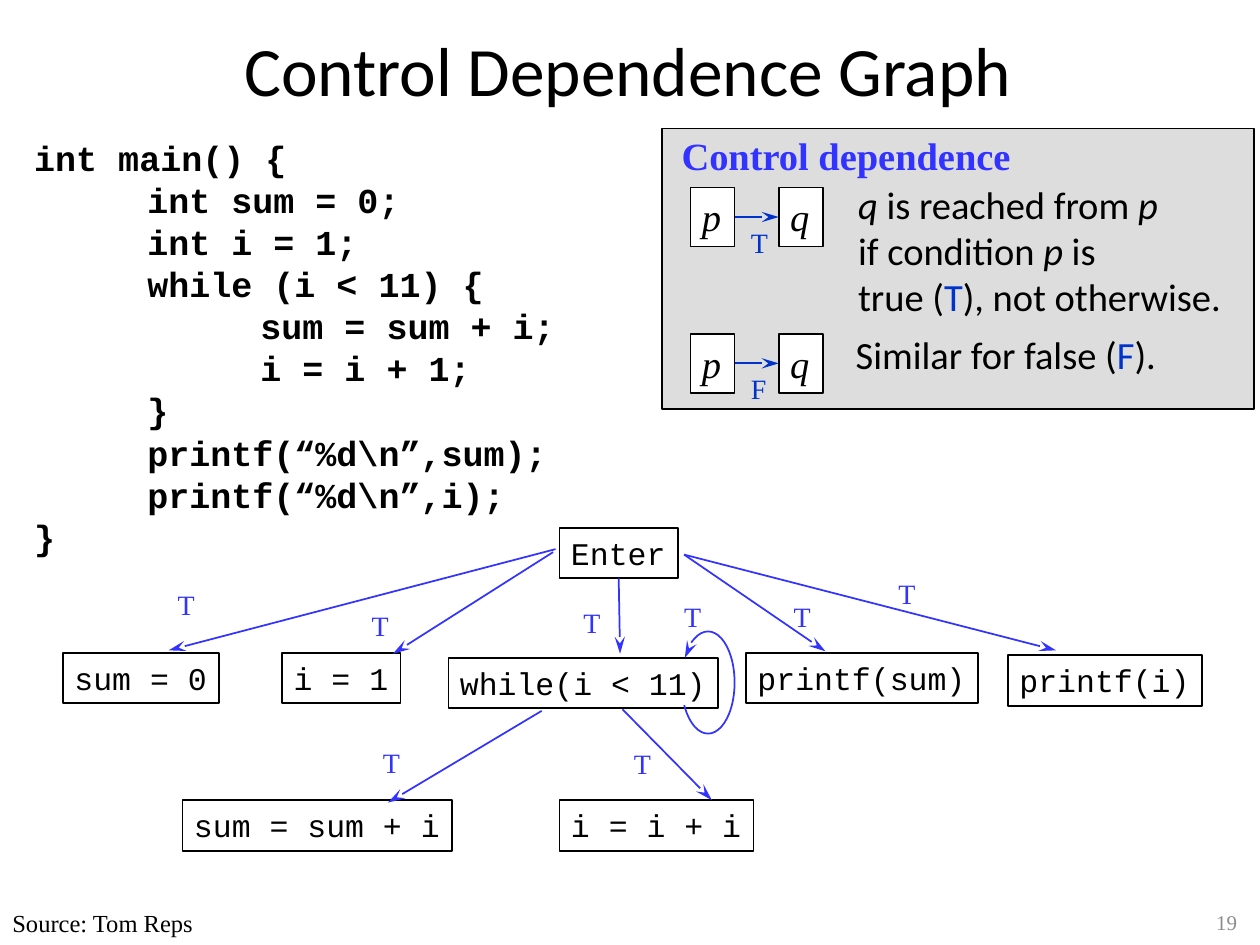
from dataclasses import dataclass
from lxml.etree import SubElement
from pptx import Presentation
from pptx.dml.color import RGBColor as Rgb
from pptx.enum.shapes import MSO_CONNECTOR as Link, MSO_SHAPE as Kind
from pptx.enum.text import MSO_ANCHOR as Anchor, MSO_AUTO_SIZE as Auto, PP_ALIGN as Align
from pptx.oxml.ns import qn
from pptx.util import Cm, Pt


@dataclass(frozen=True)
class Theme:
    """Colours, fonts and type sizes of the slide."""
    ink: str = "000000"
    paper: str = "FFFFFF"
    panel: str = "DDDDDD"
    deep: str = "0033CC"
    edge: str = "3333FF"
    pale: str = "8C8C8C"
    sans: str = "Calibri"
    serif: str = "Times New Roman"
    mono: str = "Courier New"
    title: float = 39.6
    body: int = 22
    code: int = 20
    node: int = 18
    label: int = 16
    source: int = 14
    page: int = 12


T = Theme()
CODE = ["int main() {", "\tint sum = 0;", "\tint i = 1;", "\twhile (i < 11) {",
        "\t\tsum = sum + i;", "\t\ti = i + 1;", "\t}",
        "\tprintf(“%d\\n”,sum);", "\tprintf(“%d\\n”,i);", "}"]
NODES = [("sum = 0", 1.27, 13.16), ("i = 1", 5.69, 13.16),
         ("while(i < 11)", 9.04, 13.26), ("printf(sum)", 15.04, 13.16),
         ("printf(i)", 20.32, 13.21), ("sum = sum + i", 3.68, 16.13),
         ("i = i + i", 11.28, 16.13)]
EDGES = [((11.2, 11.07), (3.4, 13.11)), ((11.15, 11.13), (7.92, 13.18)),
         ((13.79, 11.18), (16.64, 13.13)), ((13.79, 11.18), (21.29, 13.11)),
         ((10.92, 14.33), (7.82, 16.18)), ((12.55, 14.3), (14.35, 16.13))]
MARKS = [(3.35, 11.73), (7.26, 12.14), (15.77, 11.96), (17.88, 11.51),
         (7.49, 14.91), (12.55, 14.94), (11.53, 12.09), (13.56, 11.96)]


def write(par, text, font, size, color=T.ink, bold=False, italic=False):
    """Add one styled run to a paragraph."""
    run = par.add_run()
    run.text = text
    run.font.name, run.font.size = font, Pt(size)
    run.font.bold, run.font.italic = bold, italic
    run.font.color.rgb = Rgb.from_string(color)


def fit(frame, wrap=False):
    """Set wrapping, inner margins and growth of a text frame."""
    frame.word_wrap = wrap
    frame.margin_left = frame.margin_right = Cm(0.23)
    frame.margin_top = frame.margin_bottom = Cm(0.12)
    frame.auto_size = Auto.NONE if wrap else Auto.SHAPE_TO_FIT_TEXT


def add_text(slide, box, lines, font, size, color=T.ink, bold=False, wrap=False):
    """Add a text box whose lines are lists of (text, style) runs."""
    frame = slide.shapes.add_textbox(*map(Cm, box)).text_frame
    fit(frame, wrap)
    for i, runs in enumerate(lines):
        par = frame.add_paragraph() if i else frame.paragraphs[0]
        for text, style in runs:
            write(par, text, font, size, **{"color": color, "bold": bold, **style})
    return frame


def add_label(slide, left, top, text="T", color=T.edge):
    """Add the branch letter of an arrow."""
    add_text(slide, (left, top, 0.81, 0.91), [[(text, {})]], T.serif, T.label, color)


def add_rect(slide, box, fill=None):
    """Add a thin black rectangle."""
    rect = slide.shapes.add_shape(Kind.RECTANGLE, *map(Cm, box))
    rect.shadow.inherit = False
    if fill:
        rect.fill.solid()
        rect.fill.fore_color.rgb = Rgb.from_string(fill)
    else:
        rect.fill.background()
    rect.line.color.rgb = Rgb.from_string(T.ink)
    rect.line.width = Pt(1)
    return rect


def add_node(slide, text, box, font, size, fill=None, italic=False):
    """Add a rectangle with one line of text."""
    node = add_rect(slide, box, fill)
    frame = node.text_frame
    fit(frame)
    frame.vertical_anchor = Anchor.TOP
    par = frame.paragraphs[0]
    par.alignment = Align.LEFT
    write(par, text, font, size, italic=italic)
    return node


def add_step(slide, text, left, top):
    """Add a graph node as wide as its code."""
    box = (left, top, 0.48 + 0.381 * len(text), 1.02)
    return add_node(slide, text, box, T.mono, T.node)


def style_line(shape, color, end):
    """Colour a line and put a stealth head on one end."""
    shape.line.color.rgb = Rgb.from_string(color)
    shape.line.width = Pt(1)
    SubElement(shape.line._get_or_add_ln(), qn(f"a:{end}"),
               type="stealth", w="med", len="lg")


def add_arrow(slide, start, stop, color=T.edge):
    """Add a straight arrow between two points."""
    arrow = slide.shapes.add_connector(Link.STRAIGHT, *map(Cm, (*start, *stop)))
    style_line(arrow, color, "tailEnd")
    SubElement(arrow._element.spPr, qn("a:effectLst"))
    return arrow


def add_loop(slide, box, start, stop):
    """Add an arc, in degrees, that leads back to its node."""
    loop = slide.shapes.add_shape(Kind.ARC, *map(Cm, box))
    loop.adjustments[0], loop.adjustments[1] = start * 0.6, stop * 0.6
    loop.fill.background()
    style_line(loop, T.edge, "headEnd")
    loop.shadow.inherit = False


def add_pair(slide, top, letter):
    """Add the p to q sample with its branch letter."""
    left, right = (add_node(slide, name, (x, top, 0.89, 1.19), T.serif, T.body,
                            T.paper, True) for name, x in (("p", 13.92), ("q", 15.7)))
    arrow = add_arrow(slide, (14.81, top + 0.6), (15.7, top + 0.6), T.deep)
    arrow.begin_connect(left, 3)
    arrow.end_connect(right, 1)
    add_label(slide, 14.91, top + 0.64, letter, T.deep)


def add_legend(slide):
    """Add the grey panel that explains control dependence."""
    slant, blue = {"italic": True}, {"color": T.deep}
    add_rect(slide, (13.34, 2.59, 11.94, 5.66), T.panel)
    add_text(slide, (13.51, 2.54, 7.11, 1.17), [[("Control dependence", {})]],
             T.serif, T.body, T.edge, bold=True)
    add_text(slide, (17.07, 3.53, 8.38, 3.05), [
        [("q", slant), (" is reached from ", {}), ("p", slant)],
        [("if condition ", {}), ("p", slant), (" is", {})],
        [("true (", {}), ("T", blue), ("), not otherwise.", {})]], T.sans, T.body)
    add_text(slide, (17.02, 6.55, 7.29, 1.17),
             [[("Similar for false (", {}), ("F", blue), (").", {})]], T.sans, T.body)
    add_pair(slide, 3.78, "T")
    add_pair(slide, 6.73, "F")


def add_code(slide):
    """Add the program listing with tab stops for its indents."""
    frame = add_text(slide, (0.46, 2.64, 12.01, 8.79), [[(row, {})] for row in CODE],
                     T.mono, T.code, bold=True, wrap=True)
    for par in frame.paragraphs:
        par.line_spacing = Pt(24)
        tabs = SubElement(par._p.get_or_add_pPr(), qn("a:tabLst"))
        for level in (1, 2):
            SubElement(tabs, qn("a:tab"), pos=str(Cm(2.28 * level)), algn="l")


def add_graph(slide):
    """Add the nodes, arrows and branch letters of the graph."""
    enter = add_step(slide, "Enter", 11.28, 10.64)
    for node in NODES:
        add_step(slide, *node)
    for start, stop in EDGES:
        add_arrow(slide, start, stop)
    add_arrow(slide, (12.47, 11.66), (12.5, 13.18)).begin_connect(enter, 2)
    add_loop(slide, (13.74, 12.73, 1.07, 2.06), 226.5, 136.5)
    for mark in MARKS:
        add_label(slide, *mark)


def add_title(slide, text):
    """Place and fill the title."""
    title = slide.shapes.title
    title.left, title.top, title.width, title.height = map(Cm, (1.86, 0.43, 21.59, 1.91))
    title.text_frame.vertical_anchor = Anchor.MIDDLE
    par = title.text_frame.paragraphs[0]
    par.alignment = Align.CENTER
    write(par, text, T.sans, T.title)


def main():
    """Build the slide and save it."""
    deck = Presentation()
    deck.slide_width, deck.slide_height = Cm(25.4), Cm(19.05)
    slide = deck.slides.add_slide(deck.slide_layouts[5])
    add_title(slide, "Control Dependence Graph")
    add_legend(slide)
    add_graph(slide)
    add_code(slide)
    add_text(slide, (0.02, 18.19, 4.19, 0.86), [[("Source: Tom Reps", {})]],
             T.serif, T.source)
    page = add_text(slide, (19.25, 18.08, 5.92, 1.02), [[("19", {})]],
                    T.serif, T.page, T.pale, wrap=True)
    page.vertical_anchor = Anchor.MIDDLE
    page.paragraphs[0].alignment = Align.RIGHT
    deck.save("out.pptx")


if __name__ == "__main__":
    main()
